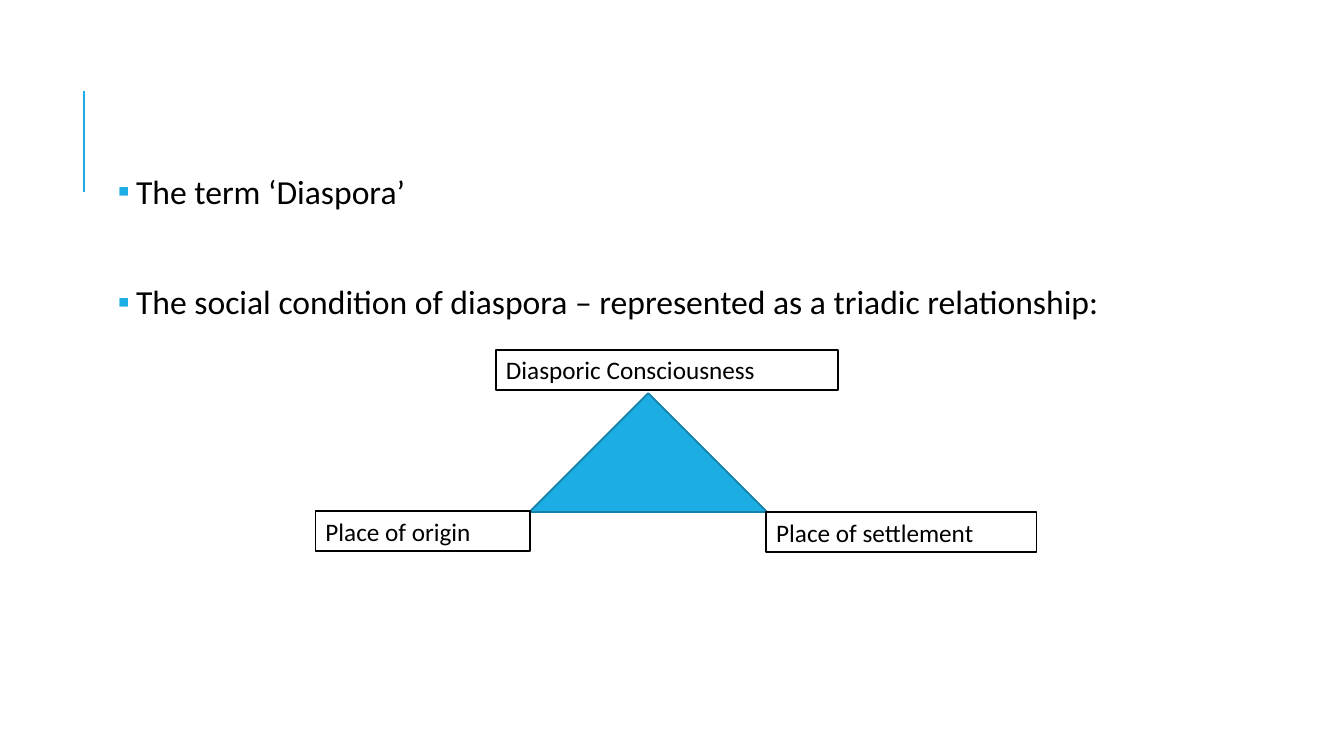
"""Build a slide on the term diaspora and its triadic relationship."""
from lxml import etree
from pptx import Presentation
from pptx.dml.color import RGBColor
from pptx.enum.shapes import MSO_CONNECTOR, MSO_SHAPE
from pptx.enum.text import MSO_ANCHOR, PP_ALIGN
from pptx.oxml.ns import qn
from pptx.util import Inches, Pt

STRAIGHT = MSO_CONNECTOR.STRAIGHT
TRIANGLE = MSO_SHAPE.ISOSCELES_TRIANGLE
RECTANGLE = MSO_SHAPE.RECTANGLE
LEFT = PP_ALIGN.LEFT
MIDDLE = MSO_ANCHOR.MIDDLE

COLORS = {"accent": "1CADE4", "edge": "1580A9", "text": "000000", "paper": "FFFFFF"}
FONT = "Calibri"
BLANK_LAYOUT = 6


def add_outlined(kind, box, fill, line):
    shape = slide.shapes.add_shape(kind, *[Inches(v) for v in box])
    shape.shadow.inherit = False
    shape.fill.solid()
    shape.fill.fore_color.rgb = RGBColor.from_string(COLORS[fill])
    shape.line.color.rgb = RGBColor.from_string(COLORS[line])
    shape.line.width = Pt(1.25)
    return shape


def style_text(paragraph, size):
    paragraph.alignment = LEFT
    paragraph.font.name = FONT
    paragraph.font.size = Pt(size)
    paragraph.font.color.rgb = RGBColor.from_string(COLORS["text"])


prs = Presentation()
prs.slide_width = Inches(13.33)
prs.slide_height = Inches(7.5)
slide = prs.slides.add_slide(prs.slide_layouts[BLANK_LAYOUT])

accent_rule = slide.shapes.add_connector(
    STRAIGHT, Inches(0.83), Inches(1.9), Inches(0.83), Inches(0.9))
accent_rule.line.color.rgb = RGBColor.from_string(COLORS["accent"])
accent_rule.line.width = Pt(1.5)
etree.SubElement(accent_rule._element.spPr, qn("a:effectLst"))

points = slide.shapes.add_textbox(
    Inches(1.12), Inches(1.69), Inches(10.63), Inches(4.4)).text_frame
points.word_wrap = True
points.margin_left = points.margin_right = Inches(0.05)
points.margin_top = points.margin_bottom = Inches(0.05)
points.text = (
    "The term ‘Diaspora’\n"
    "The social condition of diaspora – represented as a triadic relationship:"
)
for point in points.paragraphs:
    point.line_spacing = 0.9
    point.space_after = Pt(2)
    properties = point._p.get_or_add_pPr()
    properties.set("marL", str(Inches(0.18)))
    properties.set("indent", str(-Inches(0.18)))
    bullet_color = etree.SubElement(properties, qn("a:buClr"))
    etree.SubElement(bullet_color, qn("a:srgbClr"), val=COLORS["accent"])
    etree.SubElement(properties, qn("a:buFont"), typeface=FONT)
    etree.SubElement(properties, qn("a:buChar"), char="▪")
    style_text(point, 24)
points.paragraphs[1].space_before = Pt(51)

add_outlined(TRIANGLE, (5.25, 3.9, 2.36, 1.18), "accent", "edge")

corners = [
    ("Diasporic Consciousness", 4.92, 3.47, 3.39),
    ("Place of origin", 3.13, 5.07, 2.13),
    ("Place of settlement", 7.6, 5.08, 2.68),
]
for corner_text, left, top, width in corners:
    corner = add_outlined(RECTANGLE, (left, top, width, 0.4), "paper", "text").text_frame
    corner.text = corner_text
    corner.vertical_anchor = MIDDLE
    style_text(corner.paragraphs[0], 18)

prs.save("out.pptx")
